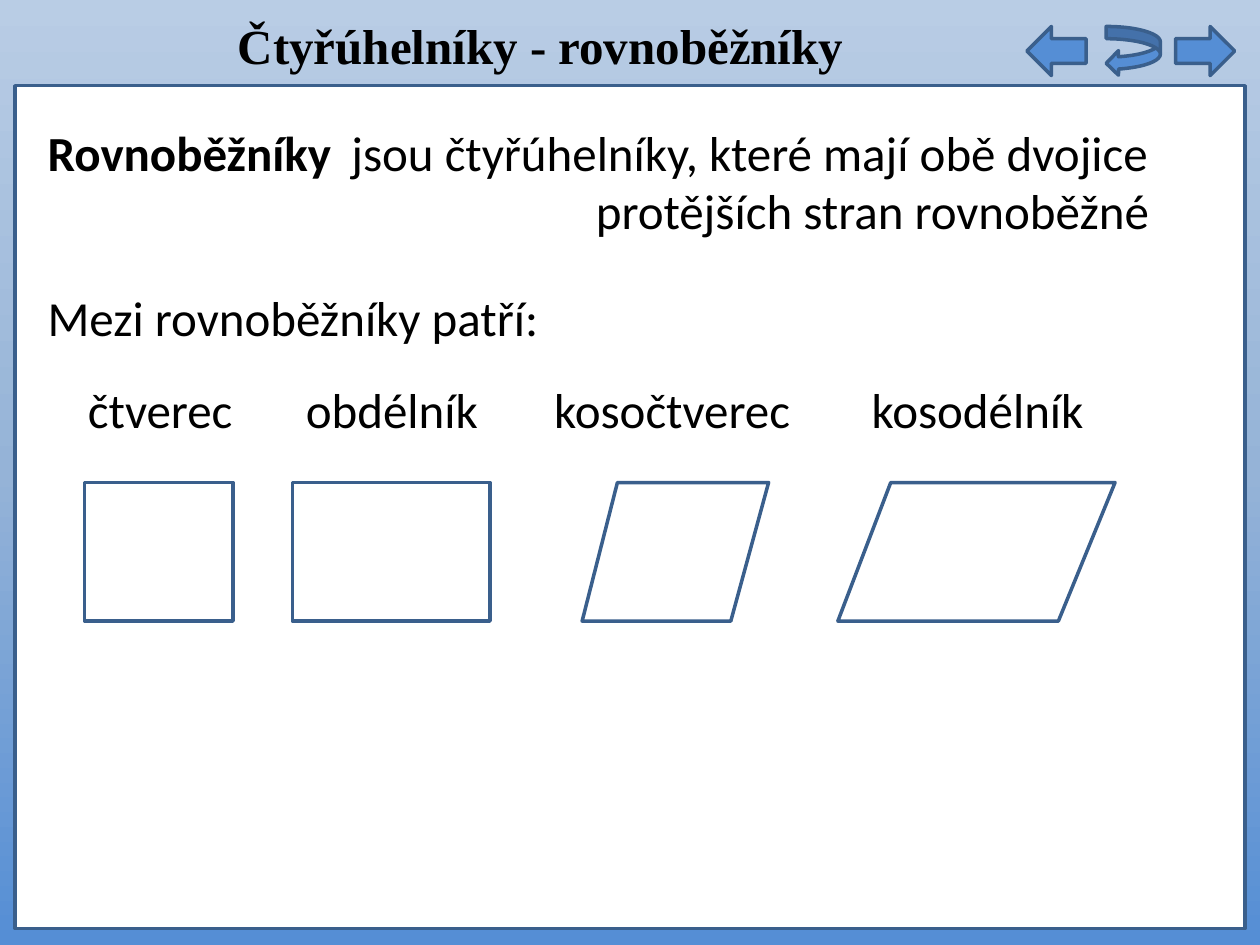
"""Build a slide that introduces the four kinds of parallelogram."""
from copy import deepcopy

from pptx import Presentation
from pptx import util as u
from pptx.dml.color import RGBColor
from pptx.enum import shapes, text

SHAPE = shapes.MSO_SHAPE
BLUE, WHITE, BLACK, OUTLINE = "558ED5", "FFFFFF", "000000", "3A5F8C"


def colour(value):
    return RGBColor.from_string(value)


def write(paragraph, content, font="Calibri", size=28, bold=False,
          align=text.PP_ALIGN.LEFT, indent=0):
    paragraph.alignment = align
    if indent:
        paragraph._p.get_or_add_pPr().set("marL", str(u.Inches(indent)))
    run = paragraph.add_run()
    run.text = content
    run.font.name = font
    run.font.size = u.Pt(size)
    run.font.bold = bold
    run.font.color.rgb = colour(BLACK)


class SlideBuilder:
    def __init__(self, slide, outline=OUTLINE, line_width=2):
        self.slide = slide
        self.outline = outline
        self.line_width = line_width

    def background(self, colours):
        fill = self.slide.background.fill
        fill.gradient()
        fill.gradient_angle = 270
        stops = next(self.slide._element.iter("{*}gsLst"))
        while len(stops) < len(colours):
            stops.append(deepcopy(stops[0]))
        for index, (stop, value) in enumerate(zip(fill.gradient_stops, colours)):
            stop.position = index / (len(colours) - 1)
            stop.color.rgb = colour(value)

    def style(self, shape, fill):
        shape.shadow.inherit = False
        if fill:
            shape.fill.solid()
            shape.fill.fore_color.rgb = colour(fill)
        else:
            shape.fill.background()
        shape.line.color.rgb = colour(self.outline)
        shape.line.width = u.Pt(self.line_width)

    def preset(self, kind, left, top, width, height, fill=None):
        shape = self.slide.shapes.add_shape(
            kind, *map(u.Inches, (left, top, width, height)))
        self.style(shape, fill)

    def polygon(self, points):
        start, *others = [(u.Inches(x), u.Inches(y)) for x, y in points]
        builder = self.slide.shapes.build_freeform(*start)
        builder.add_line_segments(others, close=True)
        self.style(builder.convert_to_shape(), None)

    def text_box(self, left, top, width, height, anchor=text.MSO_ANCHOR.TOP):
        box = self.slide.shapes.add_textbox(
            *map(u.Inches, (left, top, width, height)))
        frame = box.text_frame
        frame.word_wrap = True
        frame.vertical_anchor = anchor
        return frame

    def label(self, content, left, top, width, height=0.57, **style):
        write(self.text_box(left, top, width, height).paragraphs[0], content, **style)


def main():
    presentation = Presentation()
    presentation.slide_width = u.Inches(10)
    presentation.slide_height = u.Inches(7.5)
    slide = presentation.slides.add_slide(presentation.slide_layouts[6])
    builder = SlideBuilder(slide)

    builder.background(["B9CDE5", "95B3D7", BLUE])
    builder.preset(SHAPE.RECTANGLE, 0.12, 0.68, 9.76, 6.69, WHITE)
    for kind, left, width in [(SHAPE.RIGHT_ARROW, 9.33, 0.47),
                              (SHAPE.LEFT_ARROW, 8.15, 0.47),
                              (SHAPE.CURVED_LEFT_ARROW, 8.78, 0.43)]:
        builder.preset(kind, left, 0.21, width, 0.39, BLUE)

    title = builder.text_box(0.03, -0.03, 8.52, 0.77, text.MSO_ANCHOR.MIDDLE)
    write(title.paragraphs[0], "Čtyřúhelníky - rovnoběžníky",
          font="Times New Roman", bold=True, align=text.PP_ALIGN.CENTER)

    builder.label("Rovnoběžníky", 0.28, 0.92, 2.6, bold=True)
    builder.label("Mezi rovnoběžníky patří:", 0.28, 2.23, 9.37)
    for name, left, width in [("čtverec", 0.6, 1.8), ("obdélník", 2.33, 1.8),
                              ("kosočtverec", 4.3, 2.12), ("kosodélník", 6.82, 2.04)]:
        builder.label(name, left, 2.96, width)

    top, height = 3.83, 1.1
    bottom = top + height
    for left, width in [(0.67, 1.18), (2.32, 1.57)]:
        builder.preset(SHAPE.RECTANGLE, left, top, width, height)
    for top_left, top_right, bottom_right, bottom_left in [(4.9, 6.1, 5.8, 4.62),
                                                           (7.07, 8.85, 8.4, 6.65)]:
        builder.polygon([(top_left, top), (top_right, top),
                         (bottom_right, bottom), (bottom_left, bottom)])

    definition = builder.text_box(2.69, 0.92, 7.19, 1.04)
    write(definition.paragraphs[0], "jsou čtyřúhelníky, které mají obě dvojice")
    write(definition.add_paragraph(), "protějších stran rovnoběžné", indent=1.94)

    presentation.save("out.pptx")


if __name__ == "__main__":
    main()
